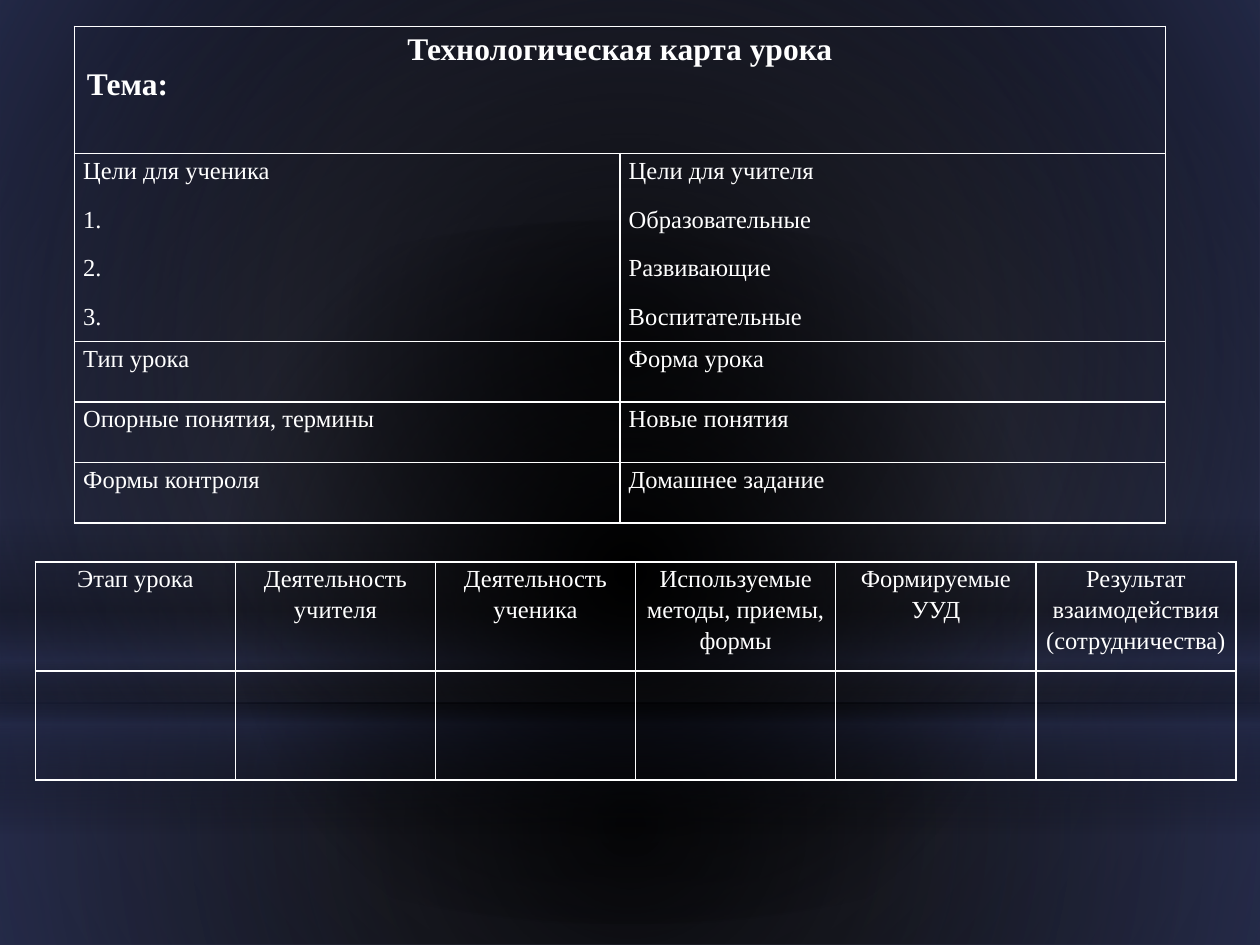
"""Builds the lesson flow chart slide: two outlined tables on a dark glowing backdrop."""
from dataclasses import dataclass

from lxml import etree
from pptx import Presentation
from pptx.dml.color import RGBColor
from pptx.enum.shapes import MSO_SHAPE
from pptx.enum.text import PP_ALIGN
from pptx.oxml.ns import qn
from pptx.util import Inches, Pt

RECTANGLE, OVAL = MSO_SHAPE.RECTANGLE, MSO_SHAPE.OVAL
LEFT, CENTER, JUSTIFY = PP_ALIGN.LEFT, PP_ALIGN.CENTER, PP_ALIGN.JUSTIFY
COLUMNS, ROWS = 100, 75
MIDDLE = (50, 50, 50, 50)


@dataclass(frozen=True)
class Theme:
    """Colours, font and type sizes of the slide."""
    ink: str = "FFFFFF"
    night: str = "000000"
    navy: str = "212745"
    haze: tuple = ("7B7F9E", "5E6280", "2C304C")
    font: str = "Times New Roman"
    title: int = 18
    body: int = 14
    line: int = 1


class LessonSlide:
    """Holds the theme and the slide, and draws each kind of element on a grid."""

    def __init__(self, deck, theme):
        """Add a blank slide and measure its grid."""
        self.theme = theme
        self.slide = deck.slides.add_slide(deck.slide_layouts[6])
        self.column = deck.slide_width / COLUMNS
        self.row = deck.slide_height / ROWS

    def place(self, left, top, width, height):
        """Turn grid units into slide lengths."""
        return (round(left * self.column), round(top * self.row),
                round(width * self.column), round(height * self.row))

    def gradient(self, fill, owner, stops, focus=None):
        """Fill with stops of position, colour and opacity, round a focus or downwards."""
        fill.gradient()
        grad = next(owner.iter(qn("a:gradFill")))
        for child in list(grad):
            grad.remove(child)
        stop_list = etree.SubElement(grad, qn("a:gsLst"))
        for position, color, opacity in stops:
            stop = etree.SubElement(stop_list, qn("a:gs"), pos=str(position * 1000))
            tone = etree.SubElement(stop, qn("a:srgbClr"), val=color)
            if opacity < 100:
                etree.SubElement(tone, qn("a:alpha"), val=str(opacity * 1000))
        if focus:
            glow = etree.SubElement(grad, qn("a:path"), {"path": "circle"})
            sides = {side: str(share * 1000) for side, share in zip("ltrb", focus)}
            etree.SubElement(glow, qn("a:fillToRect"), sides)
        else:
            etree.SubElement(grad, qn("a:lin"), ang="5400000", scaled="0")

    def backdrop(self, stops, focus):
        """Fill the slide background."""
        self.gradient(self.slide.background.fill, self.slide.element, stops, focus)

    def veil(self, kind, area, stops, focus=None):
        """Draw one translucent layer without outline."""
        layer = self.slide.shapes.add_shape(kind, *self.place(*area))
        layer.shadow.inherit = False
        layer.line.fill.background()
        self.gradient(layer.fill, layer.element, stops, focus)

    def table(self, area, heights, column_count):
        """Add an unfilled table with an outline round every cell."""
        left, top, width, _ = self.place(*area)
        grid = self.slide.shapes.add_table(
            len(heights), column_count, left, top, width,
            round(sum(heights) * self.row)).table
        grid.first_row = grid.horz_banding = False
        for row, height in zip(grid.rows, heights):
            row.height = round(height * self.row)
            for cell in row.cells:
                self.outline(cell)
        return grid

    def outline(self, cell):
        """Draw the four borders of a cell and clear its fill."""
        cell.fill.background()
        properties = cell._tc.get_or_add_tcPr()
        for index, side in enumerate(("lnL", "lnR", "lnT", "lnB")):
            border = etree.Element(qn(f"a:{side}"), w=str(Pt(self.theme.line)))
            solid = etree.SubElement(border, qn("a:solidFill"))
            etree.SubElement(solid, qn("a:srgbClr"), val=self.theme.ink)
            properties.insert(index, border)

    def run(self, paragraph, words, size, bold=False):
        """Add one run in the theme font."""
        run = paragraph.add_run()
        run.text = words
        run.font.name, run.font.size, run.font.bold = self.theme.font, Pt(size), bold
        run.font.color.rgb = RGBColor.from_string(self.theme.ink)

    def paragraphs(self, cell, count):
        """Return the given number of paragraphs of a cell."""
        frame = cell.text_frame
        return [frame.paragraphs[0]] + [frame.add_paragraph() for _ in range(count - 1)]

    def heading(self, cell, lines):
        """Write bold lines, each with its alignment."""
        for paragraph, (words, align) in zip(self.paragraphs(cell, len(lines)), lines):
            paragraph.alignment = align
            self.run(paragraph, words, self.theme.title, True)

    def body(self, cell, lines, align):
        """Write spaced body lines in a tight cell."""
        cell.margin_left = cell.margin_right = Inches(0.07)
        cell.margin_top = cell.margin_bottom = 0
        for paragraph, words in zip(self.paragraphs(cell, len(lines)), lines):
            paragraph.alignment = align
            paragraph.line_spacing, paragraph.space_after = 1.15, Pt(10)
            self.run(paragraph, words, self.theme.body)


GOALS = [
    (["Цели для ученика", "1.", "2.", "3."],
     ["Цели для учителя", "Образовательные", "Развивающие", "Воспитательные"]),
    (["Тип урока"], ["Форма урока"]),
    (["Опорные понятия, термины"], ["Новые понятия"]),
    (["Формы контроля"], ["Домашнее задание"]),
]
STAGES = ["Этап урока", "Деятельность учителя", "Деятельность ученика",
          "Используемые методы, приемы, формы", "Формируемые УУД",
          "Результат взаимодействия (сотрудничества)"]


def main():
    """Build and save the slide."""
    deck = Presentation()
    deck.slide_width, deck.slide_height = Inches(10), Inches(7.5)
    theme = Theme()
    lesson = LessonSlide(deck, theme)
    night, navy = theme.night, theme.navy

    lesson.backdrop([(position, tone, 100) for position, tone in zip((0, 42, 100), theme.haze)],
                    (24, 44, 24, 12))
    lesson.veil(RECTANGLE, (0, 55.8, COLUMNS, 19.2),
                [(0, night, 91), (37, night, 76), (100, navy, 79)], MIDDLE)
    lesson.veil(RECTANGLE, (0, 0, COLUMNS, 55.8),
                [(0, night, 89), (48, night, 62), (100, navy, 79)], MIDDLE)
    lesson.veil(RECTANGLE, (0, 41.2, COLUMNS, 25),
                [(0, night, 0), (29, night, 30), (45, navy, 40),
                 (55, night, 26), (65, navy, 60), (100, night, 0)])
    lesson.veil(OVAL, (0, 17.5, COLUMNS, 55.8), [(0, night, 100), (56, night, 0)], MIDDLE)

    goals = lesson.table((5.9, 2.1, 86.6, 39.4), [10.1, 14.9] + [4.8] * 3, 2)
    goals.cell(0, 0).merge(goals.cell(0, 1))
    lesson.heading(goals.cell(0, 0), [("Технологическая карта урока", CENTER), ("Тема:", LEFT)])
    for row, pair in enumerate(GOALS, 1):
        for column, lines in enumerate(pair):
            lesson.body(goals.cell(row, column), lines, JUSTIFY)

    stages = lesson.table((2.8, 44.6, 95.3, 17.3), [8.65] * 2, len(STAGES))
    for column, words in enumerate(STAGES):
        lesson.body(stages.cell(0, column), [words], CENTER)

    deck.save("out.pptx")


if __name__ == "__main__":
    main()
